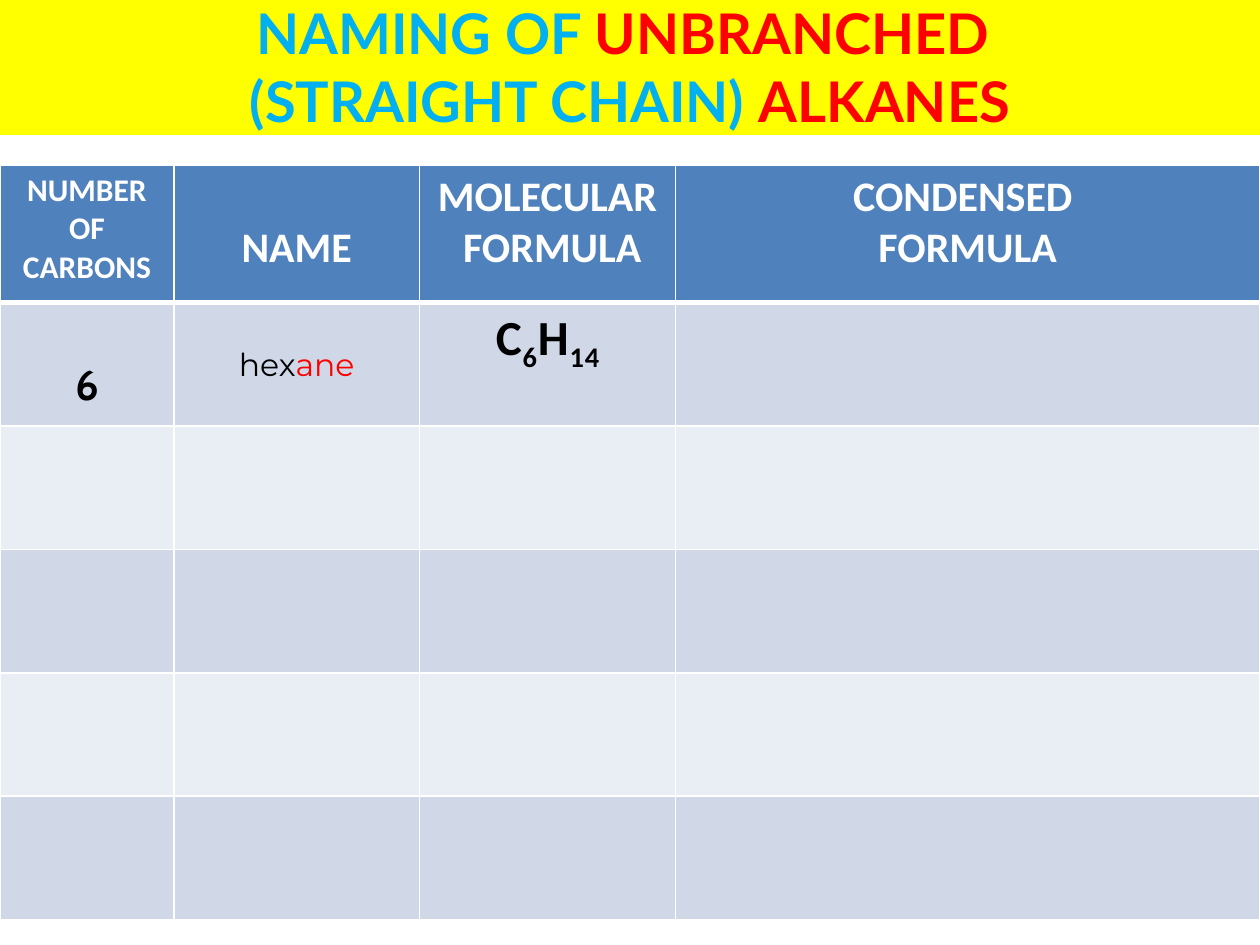
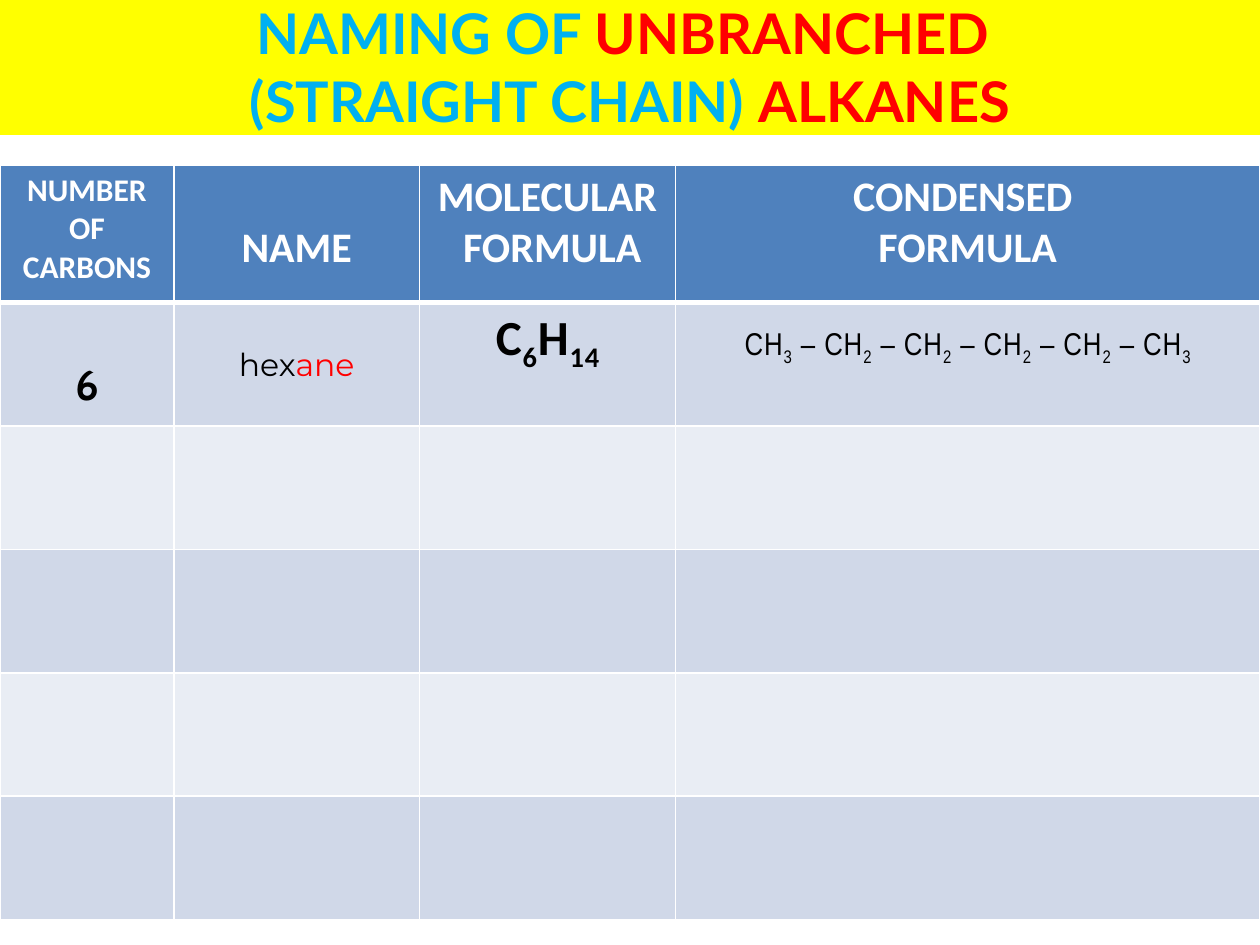
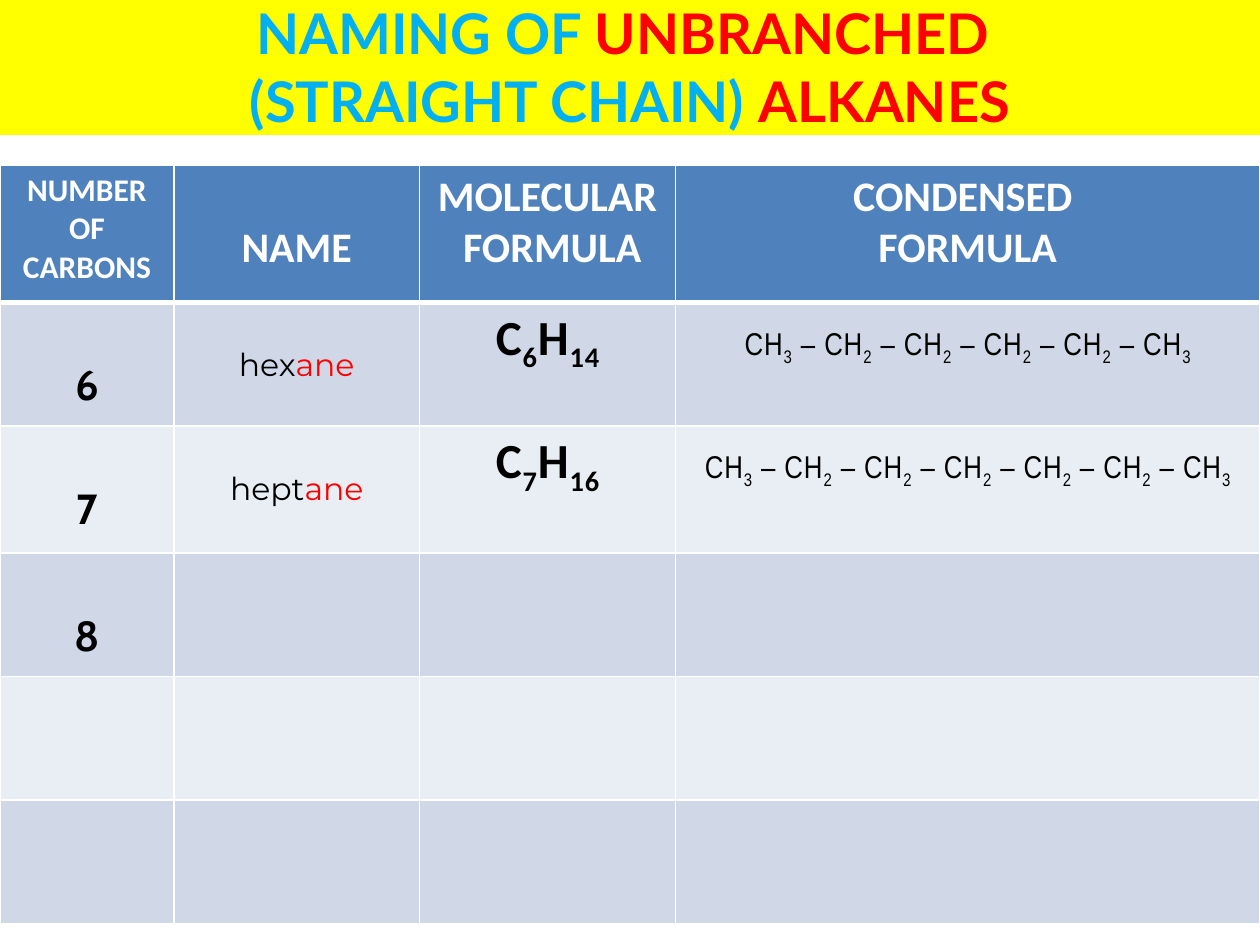
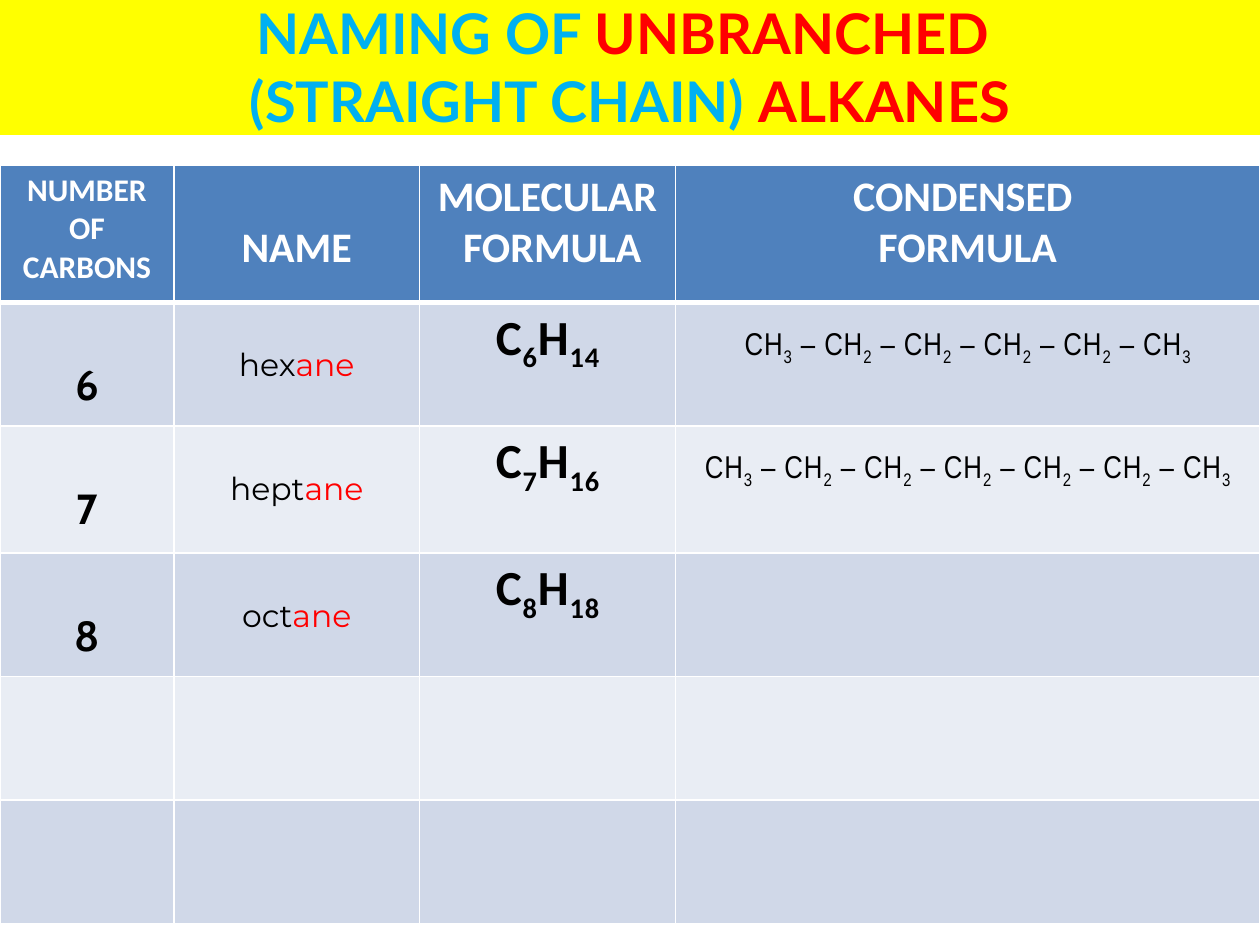
from dataclasses import dataclass
from itertools import groupby

from lxml.etree import SubElement
from pptx import Presentation
from pptx.dml.color import RGBColor
from pptx.enum.shapes import MSO_SHAPE
from pptx.enum.text import MSO_ANCHOR, PP_ALIGN
from pptx.oxml.ns import qn
from pptx.util import Inches, Pt


@dataclass(frozen=True)
class Theme:
    title_band: str = "FFFF00"
    title_plain: str = "00B0F0"
    accent: str = "FF0000"
    header: str = "4F81BD"
    bands: tuple = ("D0D8E8", "E9EDF4")
    white: str = "FFFFFF"
    ink: str = "000000"
    title_size: int = 32
    formula_size: int = 28
    head_size: int = 24
    small_size: int = 18


THEME = Theme()

# Content: each paragraph is a list of (text, format changes)
TITLE = [[
    ("NAMING OF ", {}),
    ("UNBRANCHED \n", {"color": THEME.accent}),
    ("(STRAIGHT CHAIN) ", {}),
    ("ALKANES", {"color": THEME.accent}),
]]
# Column headings: lines, type size, top margin
HEADINGS = [
    (["NUMBER OF CARBONS"], THEME.small_size, 0.05),
    (["NAME"], THEME.head_size, 0.46),
    (["MOLECULAR", " FORMULA"], THEME.head_size, 0.05),
    (["CONDENSED ", "FORMULA"], THEME.head_size, 0.05),
]
ALKANES = [(6, "hex"), (7, "hept"), (8, "oct")]
# For each slide, how many cells of each alkane's row are revealed
REVEALED = [[3], [4], [4, 4, 1], [4, 4, 3]]

# Table geometry in inches
TABLE_TOP = 1.31
COLUMNS = [1.38, 1.95, 2.03, 4.64]
HEADER_HEIGHT, ROW_HEIGHT, HEPTANE_HEIGHT = 1.09, 0.98, 1.01
BODY_ROWS = 5

# Format of each body column: top margin, then text format
BODY_FORMATS = [
    (0.46, dict(font="Cabin", size=THEME.head_size, bold=True)),
    (0.35, dict(font="Montserrat", size=THEME.small_size)),
    (0.05, dict(font="Calibri", size=THEME.formula_size, bold=True, spacing=50)),
    (0.24, dict(font="Arial Narrow", size=THEME.small_size, spacing=50)),
]


def add_run(p, text, font, size, color=THEME.ink, bold=False, spacing=0, sub=False):
    r = p.add_run()
    r.text = text
    r.font.name, r.font.size, r.font.bold = font, Pt(size), bold
    r.font.color.rgb = RGBColor.from_string(color)
    rPr = r.font._element
    if spacing:
        rPr.set("spc", str(spacing))
    if sub:
        rPr.set("baseline", "-25000")


def write(tf, paragraphs, **fmt):
    """Fill a text frame with centred paragraphs; a newline is a line break."""
    tf.word_wrap = True
    for i, runs in enumerate(paragraphs):
        p = tf.add_paragraph() if i else tf.paragraphs[0]
        p.alignment = PP_ALIGN.CENTER
        for text, changes in runs:
            for j, line in enumerate(text.split("\n")):
                if j:
                    p.add_line_break()
                if line:
                    add_run(p, line, **{**fmt, **changes})


def formula_runs(formula):
    """Set every group of digits as a subscript."""
    return [("".join(chars), {"sub": digits})
            for digits, chars in groupby(formula, str.isdigit)]


def alkane_cells(n, stem):
    chain = " – ".join(["CH3"] + ["CH2"] * (n - 2) + ["CH3"])
    return [
        [(str(n), {})],
        [(stem, {}), ("ane", {"color": THEME.accent})],
        formula_runs(f"C{n}H{2 * n + 2}"),
        formula_runs(chain),
    ]


def style_cell(cell, fill, top=1, bottom=1):
    tcPr = cell._tc.get_or_add_tcPr()
    for side, width in (("L", 1), ("R", 1), ("T", top), ("B", bottom)):
        ln = SubElement(tcPr, qn(f"a:ln{side}"), w=str(Pt(width)))
        SubElement(SubElement(ln, qn("a:solidFill")), qn("a:srgbClr"), val=THEME.white)
    cell.fill.solid()
    cell.fill.fore_color.rgb = RGBColor.from_string(fill)


def add_alkane_table(s, revealed):
    heights = [HEADER_HEIGHT] + [ROW_HEIGHT] * BODY_ROWS
    if len(revealed) > 1:
        heights[2] = HEPTANE_HEIGHT
    table = s.shapes.add_table(
        len(heights), len(COLUMNS), Inches(0), Inches(TABLE_TOP),
        Inches(sum(COLUMNS)), Inches(sum(heights))).table
    table.horz_banding = False
    for column, width in zip(table.columns, COLUMNS):
        column.width = Inches(width)
    for row, height in zip(table.rows, heights):
        row.height = Inches(height)

    # Header row
    for cell, (lines, size, margin) in zip(table.rows[0].cells, HEADINGS):
        style_cell(cell, THEME.header, bottom=3)
        cell.margin_top = Inches(margin)
        write(cell.text_frame, [[(line, {})] for line in lines],
              font="Calibri", size=size, color=THEME.white, bold=True)

    # Body bands
    for i in range(BODY_ROWS):
        for cell in table.rows[i + 1].cells:
            style_cell(cell, THEME.bands[i % 2], top=1 if i else 3)

    # Revealed answers
    for i, (alkane, count) in enumerate(zip(ALKANES, revealed), start=1):
        contents = alkane_cells(*alkane)[:count]
        for cell, runs, (margin, fmt) in zip(table.rows[i].cells, contents, BODY_FORMATS):
            cell.margin_top = Inches(margin)
            write(cell.text_frame, [runs], **fmt)


def add_title_band(s):
    sp = s.shapes.add_shape(MSO_SHAPE.RECTANGLE, Inches(0), Inches(-0.02),
                            Inches(10), Inches(1.09))
    sp.shadow.inherit = False
    sp.fill.solid()
    sp.fill.fore_color.rgb = RGBColor.from_string(THEME.title_band)
    sp.line.fill.background()
    sp.text_frame.vertical_anchor = MSO_ANCHOR.MIDDLE
    write(sp.text_frame, TITLE, font="Lato", size=THEME.title_size,
          color=THEME.title_plain, bold=True)


def main():
    prs = Presentation()
    prs.slide_width, prs.slide_height = Inches(10), Inches(7.5)
    for revealed in REVEALED:
        s = prs.slides.add_slide(prs.slide_layouts[6])
        add_alkane_table(s, revealed)
        add_title_band(s)
    prs.save("out.pptx")


if __name__ == "__main__":
    main()
